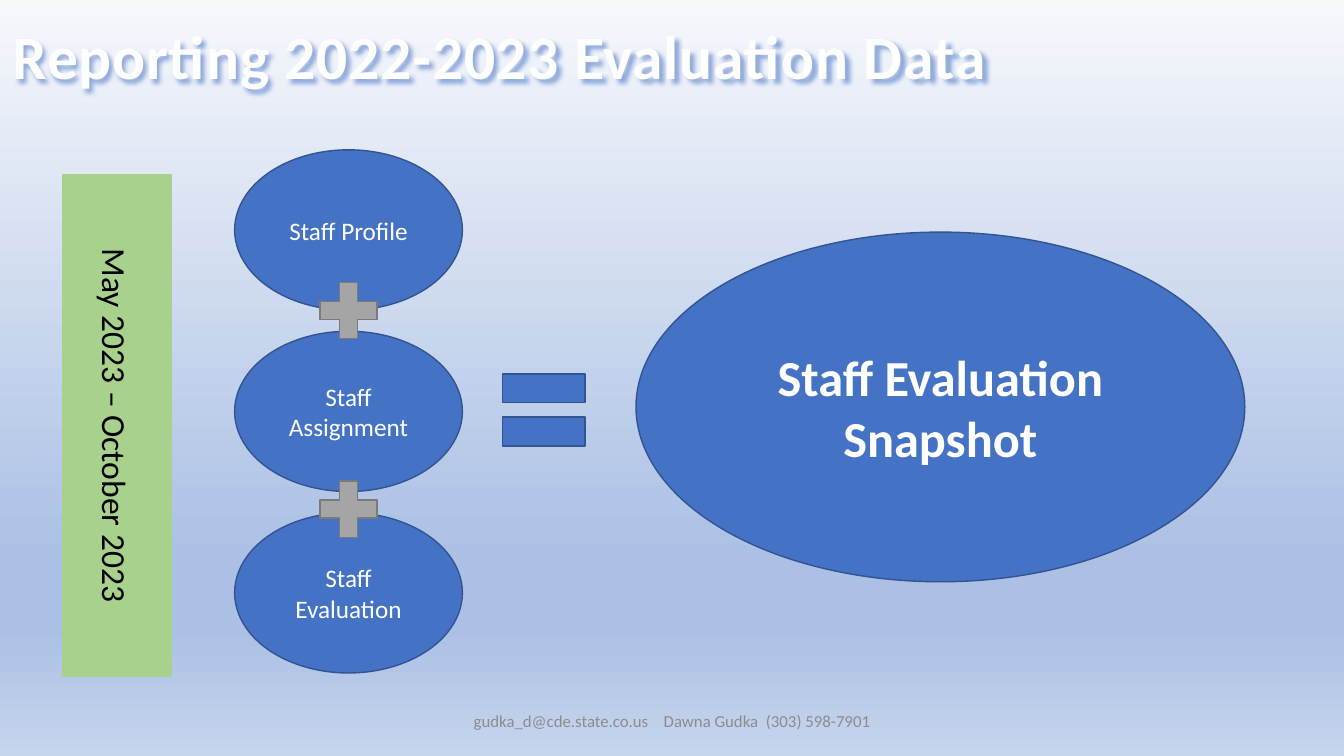
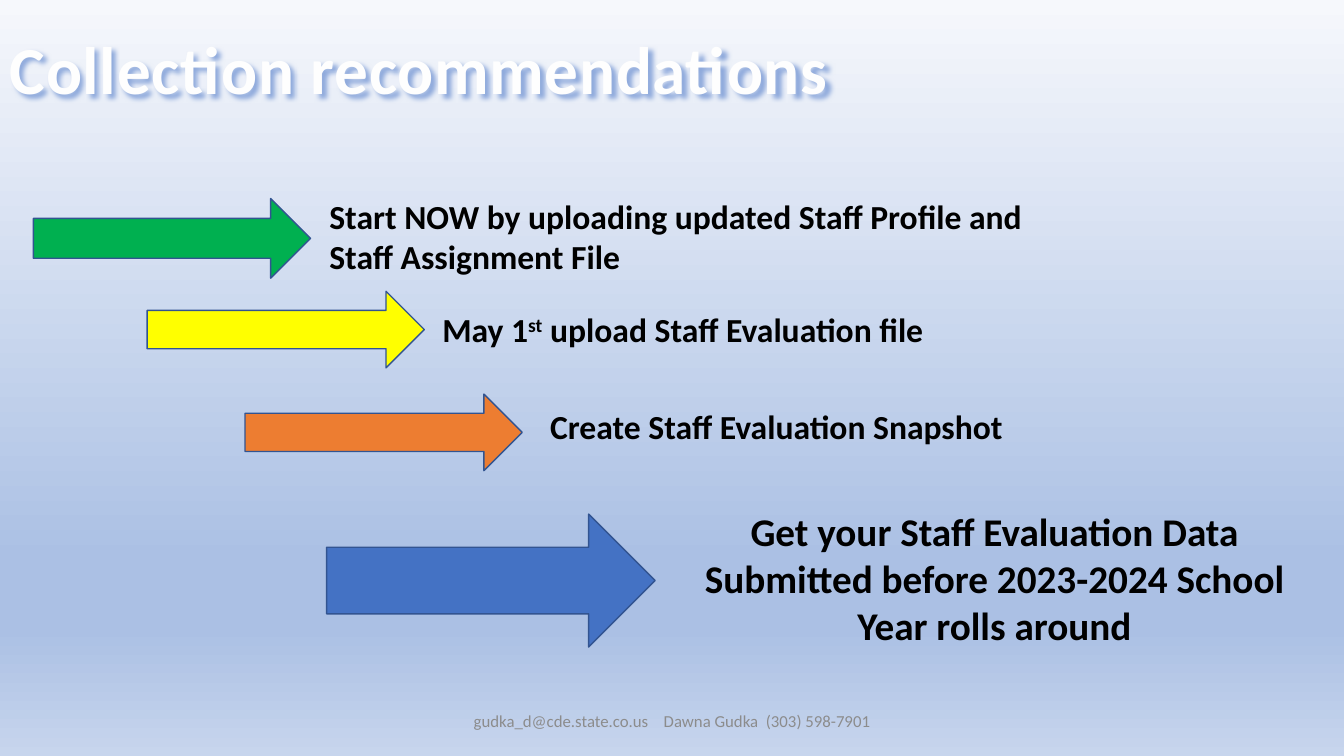
"""Build two slides on reporting staff evaluation data."""
import lxml.etree
import pptx
import pptx.dml.color
import pptx.enum.shapes
import pptx.enum.text
import pptx.oxml
import pptx.oxml.ns
import pptx.util

Pt = pptx.util.Pt
RGBColor = pptx.dml.color.RGBColor
Shape = pptx.enum.shapes.MSO_SHAPE
Align = pptx.enum.text.PP_ALIGN
Anchor = pptx.enum.text.MSO_ANCHOR
AutoSize = pptx.enum.text.MSO_AUTO_SIZE
qn = pptx.oxml.ns.qn

BLUE = RGBColor(0x44, 0x72, 0xC4)
BLUE_EDGE = RGBColor(0x32, 0x54, 0x91)
SHADOW_BLUE = RGBColor(0x8F, 0xAA, 0xDC)
GRAY = RGBColor(0xA5, 0xA5, 0xA5)
GRAY_EDGE = RGBColor(0x7A, 0x7A, 0x7A)
FOOTER_GRAY = RGBColor(0x8C, 0x8C, 0x8C)
LIGHT_GREEN = RGBColor(0xA9, 0xD1, 0x8E)
GREEN = RGBColor(0x00, 0xB0, 0x50)
YELLOW = RGBColor(0xFF, 0xFF, 0x00)
ORANGE = RGBColor(0xED, 0x7D, 0x31)
WHITE = RGBColor(0xFF, 0xFF, 0xFF)
TITLE_WHITE = RGBColor(0xFE, 0xFE, 0xFE)
BLACK = RGBColor(0x00, 0x00, 0x00)
SKY_TOP = RGBColor(0xF6, 0xF8, 0xFC)
SKY_DEEP = RGBColor(0xAB, 0xC0, 0xE4)
SKY_BOTTOM = RGBColor(0xC7, 0xD5, 0xED)
SKY_STOPS = [(0, SKY_TOP), (74, SKY_DEEP), (83, SKY_DEEP), (100, SKY_BOTTOM)]
FONT = "Calibri"
DRAWING = 'xmlns:a="http://schemas.openxmlformats.org/drawingml/2006/main"'


class SlideWriter:
    """Hold the deck style and the slide being written."""

    def __init__(self):
        self.deck = pptx.Presentation()
        self.deck.slide_width, self.deck.slide_height = Pt(960), Pt(540)
        self.page = None
        self.paint_background()

    def paint_background(self):
        master = self.deck.slide_master
        fill = master.background.fill
        fill.gradient()
        fill.gradient_angle = 270
        stops = master.element.find(".//" + qn("a:gsLst"))
        for stop in list(stops):
            stops.remove(stop)
        for percent, color in SKY_STOPS:
            stop = lxml.etree.SubElement(stops, qn("a:gs"), pos=str(percent * 1000))
            lxml.etree.SubElement(stop, qn("a:srgbClr"), val=str(color))

    def new_page(self, title, size, top, width, align):
        self.page = self.deck.slides.add_slide(self.deck.slide_layouts[6])
        self.footer()
        self.title(title, size, top, width, align)

    def span(self, para, text, size, color, bold=False, spacing=0, baseline=0):
        span = para.add_run()
        span.text = text
        font = span.font
        font.name, font.size, font.bold = FONT, Pt(size), bold
        font.color.rgb = color
        properties = span._r.get_or_add_rPr()
        if spacing:
            properties.set("spc", str(round(spacing * 100)))
        if baseline:
            properties.set("baseline", str(baseline * 1000))
        return properties

    def text_box(self, left, top, width, height, align=Align.LEFT, wrap=True):
        box = self.page.shapes.add_textbox(Pt(left), Pt(top), Pt(width), Pt(height))
        box.text_frame.word_wrap = wrap
        box.text_frame.auto_size = AutoSize.SHAPE_TO_FIT_TEXT
        box.text_frame.paragraphs[0].alignment = align
        return box

    def text(self, text, size, left, top, width, height, align=Align.LEFT):
        box = self.text_box(left, top, width, height, align)
        self.span(box.text_frame.paragraphs[0], text, size, BLACK, True)

    def title(self, text, size, top, width, align):
        box = self.text_box(0, top, width, size * 1.4, align)
        properties = self.span(
            box.text_frame.paragraphs[0], text, size, TITLE_WHITE, True, 0.5)
        properties.insert(0, pptx.oxml.parse_xml(
            f'<a:ln {DRAWING} w="9525"><a:solidFill>'
            f'<a:srgbClr val="{BLUE}"/></a:solidFill></a:ln>'))
        box._element.spPr.append(pptx.oxml.parse_xml(
            f'<a:effectLst {DRAWING}><a:outerShdw blurRad="38100" dist="38100" '
            f'dir="2700000" algn="tl" rotWithShape="0">'
            f'<a:srgbClr val="{SHADOW_BLUE}"/></a:outerShdw></a:effectLst>'))

    def footer(self):
        box = self.text_box(318, 500.4, 324, 28.8, Align.CENTER)
        box.text_frame.auto_size = AutoSize.NONE
        box.text_frame.vertical_anchor = Anchor.MIDDLE
        para = box.text_frame.paragraphs[0]
        for text, spacing in [("gudka_d@cde.state.co.us", 0), (" ", 8.1),
                              ("Dawna Gudka", 0), (" ", 2.7),
                              ("(303) 598-7901", 0)]:
            self.span(para, text, 12, FOOTER_GRAY, spacing=spacing)

    def shape(self, kind, left, top, width, height, fill=BLUE, edge=BLUE_EDGE):
        shape = self.page.shapes.add_shape(
            kind, Pt(left), Pt(top), Pt(width), Pt(height))
        shape.shadow.inherit = False
        shape.fill.solid()
        shape.fill.fore_color.rgb = fill
        shape.line.color.rgb = edge
        shape.line.width = Pt(1)
        return shape

    def label(self, shape, text, size, color=WHITE, bold=False):
        shape.text_frame.word_wrap = True
        shape.text_frame.vertical_anchor = Anchor.MIDDLE
        para = shape.text_frame.paragraphs[0]
        para.alignment = Align.CENTER
        self.span(para, text, size, color, bold)
        return para

    def ellipse(self, text, size, left, top, width, height, bold=False):
        oval = self.shape(Shape.OVAL, left, top, width, height)
        self.label(oval, text, size, bold=bold)

    def vertical_band(self, text, left, top, width, height):
        band = self.shape(
            Shape.RECTANGLE, left, top, width, height, LIGHT_GREEN, LIGHT_GREEN)
        band.line.width = Pt(0.5)
        para = self.label(band, text, 24, BLACK)
        para.line_spacing = 1.07
        para.space_after = Pt(8)
        band.text_frame._txBody.bodyPr.set("vert", "vert")


def snapshot_page(writer):
    writer.new_page("Reporting 2022-2023 Evaluation Data", 44, 9.4, 714.2, Align.CENTER)
    for row, text in enumerate(["Staff Profile", "Staff Assignment", "Staff Evaluation"]):
        writer.ellipse(text, 18, 167.6, 107 + 129.6 * row, 162.7, 114.5)
    for top in (194.4, 336.4):
        writer.shape(Shape.MATH_PLUS, 221.2, top, 55.4, 54.7, GRAY, GRAY_EDGE)
    writer.shape(Shape.MATH_EQUAL, 348.5, 249.3, 80, 87.1)
    writer.ellipse("Staff Evaluation Snapshot", 36, 454.3, 165.8, 434.9, 249.8, True)
    writer.vertical_band("May 2023 – October 2023", 44.6, 124.6, 77.8, 358.6)


def recommendations_page(writer):
    writer.new_page("Collection recommendations", 48, 15.8, 772.6, Align.LEFT)
    for left, top, width, height, fill in [
            (23.8, 141.8, 198, 56.9, GREEN), (105.1, 208.1, 198, 54.7, YELLOW),
            (175, 281.5, 198, 54.7, ORANGE), (233.3, 367.2, 234.7, 95, BLUE)]:
        writer.shape(Shape.RIGHT_ARROW, left, top, width, height, fill)
    writer.text("Start NOW by uploading updated Staff Profile and Staff Assignment File",
                24, 228.2, 136.1, 558, 87.1)
    box = writer.text_box(308.9, 217.4, 364.3, 36, wrap=False)
    for text, baseline in [("May 1", 0), ("st", 30), (" upload Staff Evaluation file", 0)]:
        writer.span(box.text_frame.paragraphs[0], text, 24, BLACK, True, baseline=baseline)
    writer.text("Create Staff Evaluation Snapshot", 24, 385.9, 286.6, 385.9, 36)
    writer.text("Get your Staff Evaluation Data Submitted before 2023-2024 School "
                "Year rolls around", 28, 473.8, 358.6, 473, 108.7, Align.CENTER)


def main():
    writer = SlideWriter()
    snapshot_page(writer)
    recommendations_page(writer)
    writer.deck.save("out.pptx")


if __name__ == "__main__":
    main()
